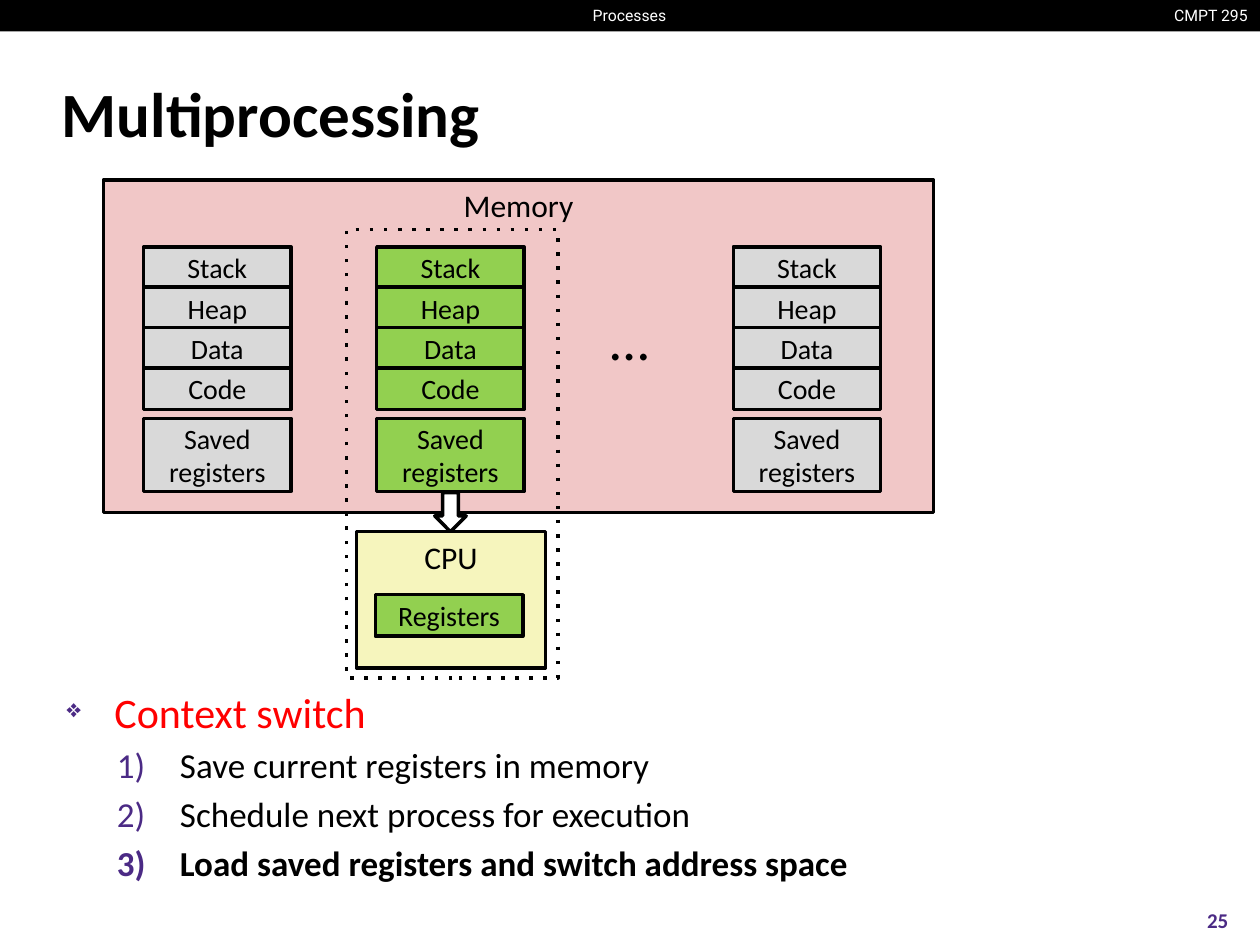
import dataclasses
import typing

import lxml.etree
import pptx
import pptx.dml.color
import pptx.enum.shapes
import pptx.enum.text
import pptx.oxml.ns
import pptx.slide
import pptx.util

ALIGN = pptx.enum.text.PP_ALIGN
ANCHOR = pptx.enum.text.MSO_ANCHOR
KIND = pptx.enum.shapes.MSO_SHAPE
COLS, ROWS = 100, 75  # slide grid, one cell is a tenth of an inch


@dataclasses.dataclass(frozen=True)
class Theme:
    font: str = "Calibri"
    head: str = "Roboto"
    black: str = "000000"
    white: str = "FFFFFF"
    red: str = "FF0000"
    purple: str = "4B2A85"
    pink: str = "F1C7C7"
    cream: str = "F6F5BD"
    grey: str = "D9D9D9"
    green: str = "92D050"
    title: int = 36
    dots: int = 32
    topic: int = 24
    step: int = 20
    label: int = 18
    cell: int = 16
    page: int = 12
    bar: int = 9
    line: int = 2


THEME = Theme()


class Area(typing.NamedTuple):
    col: float
    row: float
    wide: float
    high: float


@dataclasses.dataclass(frozen=True)
class Box:
    area: Area
    fill: typing.Optional[str]
    text: str = ""
    size: int = THEME.cell
    anchor: ANCHOR = ANCHOR.MIDDLE
    kind: KIND = KIND.RECTANGLE
    line: typing.Optional[str] = THEME.black
    dash: str = ""


@dataclasses.dataclass(frozen=True)
class Label:
    area: Area
    text: str
    size: int
    align: ALIGN = ALIGN.CENTER
    color: str = THEME.black
    font: str = THEME.font
    bold: bool = False
    anchor: ANCHOR = ANCHOR.TOP


class Item(typing.NamedTuple):
    text: str
    size: int
    color: str
    bold: bool
    level: int
    margin: float
    hang: float
    mark: typing.Sequence[typing.Tuple[str, typing.Dict[str, str]]]


def rgb(code: str) -> pptx.dml.color.RGBColor:
    return pptx.dml.color.RGBColor.from_string(code)


def place(area: Area) -> typing.List[int]:
    x, y = WIDE / COLS, HIGH / ROWS
    return [round(n * unit) for n, unit in zip(area, (x, y, x, y))]


def add(parent: typing.Any, tag: str, **values: str) -> typing.Any:
    return lxml.etree.SubElement(parent, pptx.oxml.ns.qn(tag), values)


def assign(target: typing.Any, values: typing.Dict[str, typing.Any]) -> None:
    for name, value in values.items():
        setattr(target, name, value)


def write(para: typing.Any, text: str, size: int, color: str = THEME.black,
          font: str = THEME.font, bold: bool = False) -> None:
    run = para.add_run()
    run.text = text
    assign(run.font, {"size": pptx.util.Pt(size), "name": font, "bold": bold})
    run.font.color.rgb = rgb(color)


def indent(para: typing.Any, margin: float, hang: float) -> typing.Any:
    props = para._p.get_or_add_pPr()
    props.set("marL", str(pptx.util.Inches(margin)))
    props.set("indent", str(-pptx.util.Inches(hang)))
    return props


def draw_box(slide: pptx.slide.Slide, box: Box) -> None:
    shape = slide.shapes.add_shape(box.kind, *place(box.area))
    shape.shadow.inherit = False
    for part, color in ((shape.fill, box.fill), (shape.line.fill, box.line)):
        if color:
            part.solid()
            part.fore_color.rgb = rgb(color)
        else:
            part.background()
    if box.line:
        shape.line.width = pptx.util.Pt(THEME.line)
    if box.dash:
        add(shape.element.spPr.find(pptx.oxml.ns.qn("a:ln")), "a:prstDash", val=box.dash)
    if box.text:
        assign(shape.text_frame, {"word_wrap": True, "vertical_anchor": box.anchor})
        para = shape.text_frame.paragraphs[0]
        para.alignment = ALIGN.CENTER
        write(para, box.text, box.size)


def draw_label(slide: pptx.slide.Slide, label: Label) -> None:
    frame = slide.shapes.add_textbox(*place(label.area)).text_frame
    assign(frame, {"word_wrap": False, "vertical_anchor": label.anchor})
    para = frame.paragraphs[0]
    para.alignment = label.align
    write(para, label.text, label.size, label.color, label.font, label.bold)


def draw_title(slide: pptx.slide.Slide, area: Area, text: str) -> None:
    title = slide.shapes.title
    assign(title, dict(zip(("left", "top", "width", "height"), place(area))))
    assign(title.text_frame, {"word_wrap": True, "vertical_anchor": ANCHOR.MIDDLE,
                              "auto_size": pptx.enum.text.MSO_AUTO_SIZE.NONE})
    para = title.text_frame.paragraphs[0]
    para.alignment = ALIGN.LEFT
    indent(para, 0.13, 0.13)
    write(para, text, THEME.title, bold=True)


def draw_list(slide: pptx.slide.Slide, area: Area, items: typing.List[Item]) -> None:
    frame = slide.shapes.add_textbox(*place(area)).text_frame
    frame.word_wrap = True
    for n, item in enumerate(items):
        para = frame.add_paragraph() if n else frame.paragraphs[0]
        assign(para, {"level": item.level, "space_before": pptx.util.Pt(item.size * 0.2)})
        props = indent(para, item.margin, item.hang)
        add(add(props, "a:buClr"), "a:srgbClr", val=THEME.purple)
        for tag, values in item.mark:
            add(props, tag, **values)
        write(para, item.text, item.size, item.color, bold=item.bold)


def draw_process(slide: pptx.slide.Slide, col: float, fill: str) -> None:
    for n, text in enumerate(("Stack", "Heap", "Data", "Code")):
        draw_box(slide, Box(Area(col, 19.6 + 3.2 * n, 11.7, 3.3), fill, text))
    draw_box(slide, Box(Area(col, 33.2, 11.7, 5.8), fill, "Saved registers"))


deck = pptx.Presentation()
WIDE, HIGH = pptx.util.Inches(10), pptx.util.Inches(7.5)
assign(deck, {"slide_width": WIDE, "slide_height": HIGH})
page = deck.slides.add_slide(deck.slide_layouts[5])

# Header bar, title and page number
draw_box(page, Box(Area(0, 0, COLS, 2.5), THEME.black, line=None))
draw_label(page, Label(Area(91.9, 0, 8.1, 2.5), "CMPT 295", THEME.bar, ALIGN.RIGHT,
                       THEME.white, THEME.head))
draw_label(page, Label(Area(46, 0, 7.9, 2.5), "Processes", THEME.bar,
                       color=THEME.white, font=THEME.head))
draw_title(page, Area(3.9, 4.8, 91.9, 8.3), "Multiprocessing")
draw_label(page, Label(Area(93.3, 71, 6.7, 4), "25", THEME.page, color=THEME.purple,
                       bold=True, anchor=ANCHOR.MIDDLE))

# CPU and memory
draw_box(page, Box(Area(28.3, 42.2, 15, 10.8), THEME.cream, "CPU", THEME.label, ANCHOR.TOP))
draw_box(page, Box(Area(29.8, 47.2, 11.7, 3.3), THEME.green, "Registers"))
draw_box(page, Box(Area(8.2, 14.3, 65.9, 26.4), THEME.pink, "Memory", THEME.label, ANCHOR.TOP))

# Processes, with the running one framed and linked to the CPU
draw_box(page, Box(Area(27.5, 18.2, 16.8, 35.6), None, dash="dot"))
for col, fill in ((11.4, THEME.grey), (29.9, THEME.green), (58.2, THEME.grey)):
    draw_process(page, col, fill)
draw_label(page, Label(Area(47.5, 23.7, 5.1, 6.4), "…", THEME.dots, ALIGN.LEFT))
draw_box(page, Box(Area(34.5, 39.1, 2.5, 3.1), THEME.white, kind=KIND.DOWN_ARROW))

# Steps of a context switch
diamond = (("a:buSzPct", {"val": "60000"}), ("a:buChar", {"char": "❖"}))
number = (("a:buFont", {"typeface": THEME.font}), ("a:buAutoNum", {"type": "arabicParenR"}))
steps = (("Save current registers in memory", False),
         ("Schedule next process for execution", False),
         ("Load saved registers and switch address space", True))
draw_list(page, Area(4.3, 54, 91.5, 18), [
    Item("Context switch", THEME.topic, THEME.red, False, 0, 0.38, 0.38, diamond),
    *(Item(text, THEME.step, THEME.black, bold, 1, 0.9, 0.5, number) for text, bold in steps)])

deck.save("out.pptx")
